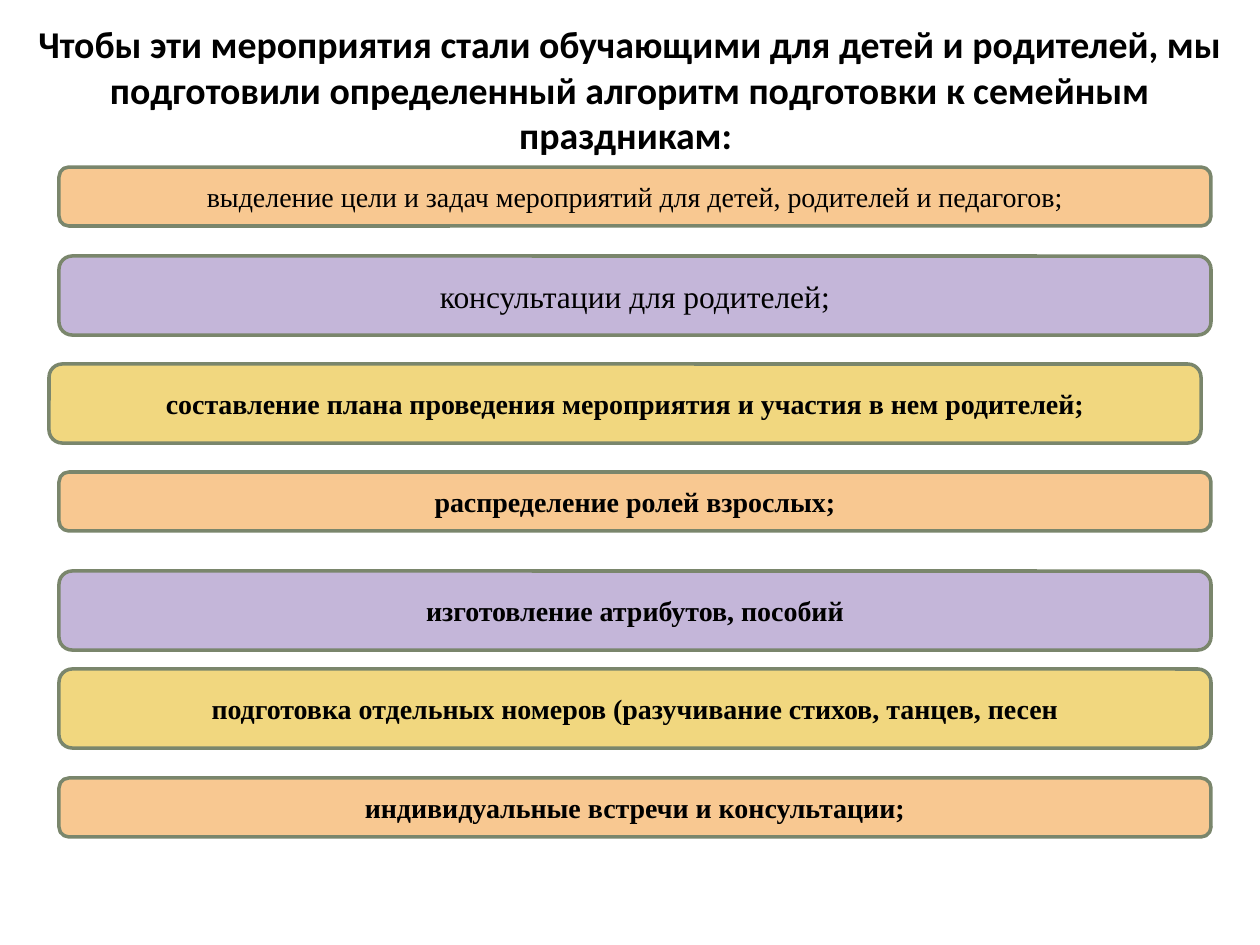
import pptx
import pptx.util
import pptx.dml.color
import pptx.enum.shapes
import pptx.enum.text
from dataclasses import dataclass


@dataclass(frozen=True)
class Theme:
    orange: str = "F8C891"
    violet: str = "C4B6D9"
    yellow: str = "F1D77F"
    border: str = "7A866C"
    ink: str = "000000"
    title_font: str = "Calibri"
    step_font: str = "Times New Roman"
    title_size: float = 21.6
    step_size: int = 16
    large_size: int = 18


theme = Theme()


def px(count):
    return round(count * 914400 / 126)


def write(shape, text, font, size, bold):
    frame = shape.text_frame
    frame.word_wrap = True
    frame.auto_size = pptx.enum.text.MSO_AUTO_SIZE.NONE
    frame.vertical_anchor = pptx.enum.text.MSO_ANCHOR.MIDDLE
    frame.text = text
    para = frame.paragraphs[0]
    para.alignment = pptx.enum.text.PP_ALIGN.CENTER
    span = para.runs[0]
    span.font.name = font
    span.font.size = pptx.util.Pt(size)
    span.font.bold = bold
    span.font.color.rgb = pptx.dml.color.RGBColor.from_string(theme.ink)


deck = pptx.Presentation()
deck.slide_width, deck.slide_height = px(1260), px(945)
page = deck.slides.add_slide(deck.slide_layouts[5])

# Title
title = page.shapes.title
title.left, title.top, title.width, title.height = px(0), px(28), px(1260), px(122)
write(title, "Чтобы эти мероприятия стали обучающими для детей и родителей, "
      "мы подготовили определенный алгоритм подготовки к семейным праздникам:\u00a0",
      theme.title_font, theme.title_size, True)

# Steps: left, top, height, text size, bold, text
steps = [
    (59, 167, 59, theme.step_size, False,
     "выделение цели и задач мероприятий для детей, родителей и педагогов;"),
    (59, 256, 79, theme.large_size, False, "консультации для родителей;"),
    (49, 364, 79, theme.step_size, True,
     "составление плана проведения мероприятия и участия в нем родителей;"),
    (59, 472, 59, theme.step_size, True, "распределение ролей взрослых;"),
    (59, 571, 79, theme.step_size, True, "изготовление атрибутов, пособий"),
    (59, 669, 79, theme.step_size, True,
     "подготовка отдельных номеров (разучивание стихов, танцев, песен"),
    (59, 778, 59, theme.step_size, True, "индивидуальные встречи и консультации;"),
]
fills = [theme.orange, theme.violet, theme.yellow]

for index, (left, top, height, size, bold, text) in enumerate(steps):
    box = page.shapes.add_shape(pptx.enum.shapes.MSO_SHAPE.ROUNDED_RECTANGLE,
                                px(left), px(top), px(1152), px(height))
    box.shadow.inherit = False
    box.fill.solid()
    box.fill.fore_color.rgb = pptx.dml.color.RGBColor.from_string(fills[index % len(fills)])
    box.line.color.rgb = pptx.dml.color.RGBColor.from_string(theme.border)
    box.line.width = pptx.util.Pt(2)
    write(box, text, theme.step_font, size, bold)

deck.save("out.pptx")
